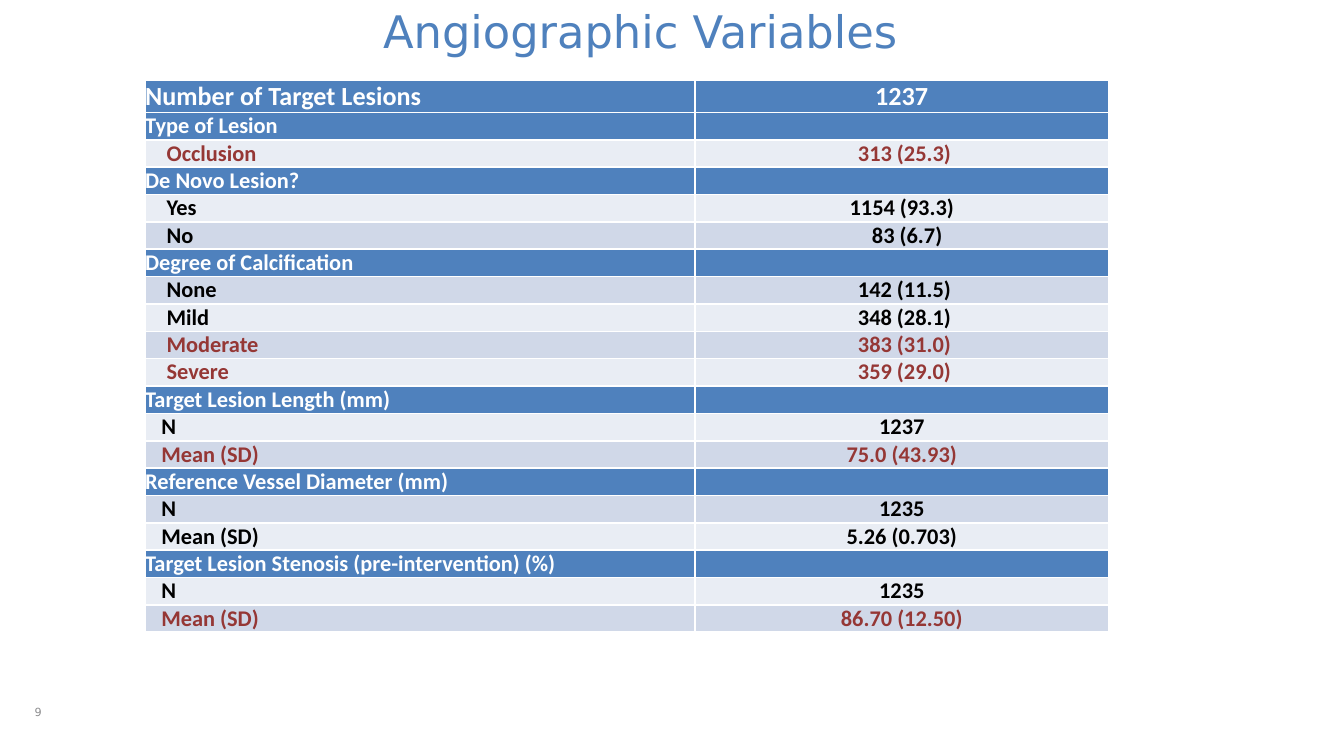
from lxml import etree
from pptx import Presentation, util as u
from pptx.dml.color import RGBColor
from pptx.enum import text
from pptx.oxml.ns import qn

COLORS = {"blue": "4F81BD", "white": "FFFFFF", "black": "000000", "red": "953735",
          "light": "E9EDF4", "dark": "D0D8E8", "grey": "8C8C8E"}
TITLE = "Angiographic Variables"
PAGE = "9"
TOTAL = ("Number of Target Lesions", "1237")
SECTIONS = [
    ("Type of Lesion", 0.16, [("Occlusion", "313 (25.3)", "red", 0.04)]),
    ("De Novo Lesion?", 0.16, [("Yes", "1154 (93.3)", "black", 0),
                               ("No", "83 (6.7)", "black", 0.08)]),
    ("Degree of Calcification", 0.16, [("None", "142 (11.5)", "black", 0.04),
                                       ("Mild", "348 (28.1)", "black", 0.04),
                                       ("Moderate", "383 (31.0)", "red", 0.04),
                                       ("Severe", "359 (29.0)", "red", 0.04)]),
    ("Target Lesion Length (mm)", 0.12, [("N", "1237", "black", 0),
                                         ("Mean (SD)", "75.0 (43.93)", "red", 0)]),
    ("Reference Vessel Diameter (mm)", 0.12, [("N", "1235", "black", 0),
                                              ("Mean (SD)", "5.26 (0.703)", "black", 0)]),
    ("Target Lesion Stenosis (pre-intervention) (%)", 0.12,
     [("N", "1235", "black", 0), ("Mean (SD)", "86.70 (12.50)", "red", 0)]),
]
COLUMNS = (4.09, 3.08)
ROW_HEIGHT = 0.2


def rgb(name):
    return RGBColor.from_string(COLORS[name])


def style(paragraph, size, color, font, bold=False):
    for run in paragraph.runs:
        run.font.size = u.Pt(size)
        run.font.name = font
        run.font.bold = bold
        run.font.color.rgb = rgb(color)


def add_borders(cell):
    properties = cell._tc.get_or_add_tcPr()
    for side in "LRTB":
        line = etree.SubElement(properties, qn(f"a:ln{side}"), w=str(u.Pt(1)))
        fill = etree.SubElement(line, qn("a:solidFill"))
        etree.SubElement(fill, qn("a:srgbClr"), val=COLORS["white"])


def fill_cell(cell, words, size, color, back, indent, centred, is_total):
    add_borders(cell)
    cell.fill.solid()
    cell.fill.fore_color.rgb = rgb(back)
    cell.margin_left = cell.margin_right = cell.margin_top = cell.margin_bottom = 0
    if is_total:
        cell.vertical_anchor = text.MSO_ANCHOR.BOTTOM
    cell.text_frame.text = words
    paragraph = cell.text_frame.paragraphs[0]
    paragraph.alignment = text.PP_ALIGN.CENTER if centred else text.PP_ALIGN.LEFT
    paragraph.space_after = u.Pt(0.5)
    if indent:
        paragraph._p.get_or_add_pPr().set("marL", str(u.Inches(indent)))
    style(paragraph, size, color, "Calibri", True)
    if not words:
        etree.SubElement(paragraph._p, qn("a:endParaRPr"), sz=str(size * 100))


def table_rows():
    yield *TOTAL, 14, "white", 0, 0
    for heading, indent, entries in SECTIONS:
        yield heading, "", 12, "white", 0, 0
        for label, value, color, shift in entries:
            yield label, value, 12, color, indent, shift


def add_variables(slide):
    rows = list(table_rows())
    table = slide.shapes.add_table(
        len(rows), len(COLUMNS), u.Inches(1.08), u.Inches(0.6),
        u.Inches(sum(COLUMNS)), u.Inches(ROW_HEIGHT * len(rows))).table
    for column, width in zip(table.columns, COLUMNS):
        column.width = u.Inches(width)
    for index, (label, value, size, color, indent, shift) in enumerate(rows):
        table.rows[index].height = u.Inches(ROW_HEIGHT)
        band = "dark" if index % 2 else "light"
        back = "blue" if color == "white" else band
        for column, (words, margin) in enumerate(((label, indent), (value, shift))):
            fill_cell(table.cell(index, column), words, size, color, back,
                      margin, column == 1, index == 0)


def main():
    deck = Presentation()
    deck.slide_width = u.Inches(10)
    deck.slide_height = deck.slide_width * 9 // 16
    slide = deck.slides.add_slide(deck.slide_layouts[5])
    add_variables(slide)

    title = slide.shapes.title
    title.left, title.top = u.Inches(2.75), u.Inches(-0.02)
    title.width, title.height = u.Inches(4.17), u.Inches(0.5)
    title.text_frame.text = TITLE
    title.text_frame.vertical_anchor = text.MSO_ANCHOR.BOTTOM
    title.text_frame.paragraphs[0].alignment = text.PP_ALIGN.LEFT
    style(title.text_frame.paragraphs[0], 24, "blue", "DejaVu Sans")

    page = slide.shapes.add_textbox(0, u.Inches(5.05), u.Inches(0.57), u.Inches(0.49)).text_frame
    page.word_wrap = True
    page.text = PAGE
    page.vertical_anchor = text.MSO_ANCHOR.MIDDLE
    page.paragraphs[0].alignment = text.PP_ALIGN.CENTER
    style(page.paragraphs[0], 6, "grey", "DejaVu Sans")

    deck.save("out.pptx")


if __name__ == "__main__":
    main()
